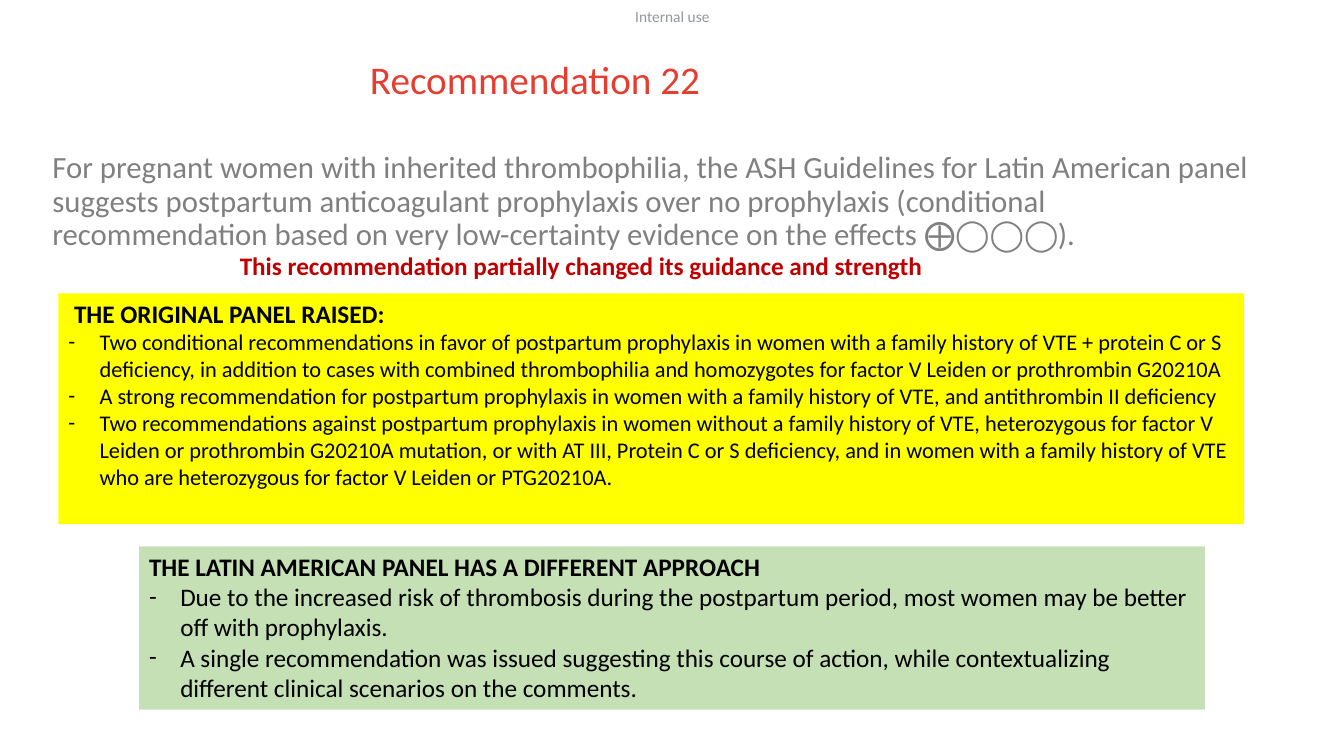
from dataclasses import dataclass

from lxml.etree import SubElement
from pptx import Presentation
from pptx.dml.color import RGBColor
from pptx.enum.shapes import MSO_SHAPE
from pptx.enum.text import MSO_ANCHOR, PP_ALIGN
from pptx.oxml.ns import qn
from pptx.util import Inches, Pt

COLORS = {
    "label": "93979B",
    "title": "E53E31",
    "body": "808080",
    "note": "C00000",
    "ink": "000000",
    "yellow": "FFFF00",
    "green": "C5E0B4",
}
FONT = "Calibri"
INDENT = Inches(0.31)


@dataclass
class Label:
    text: str
    box: tuple[float, float, float, float]
    size: int
    color: str
    bold: bool = False
    inset: bool = False
    wrap: bool = True
    spacing: float = 1.0


@dataclass
class Panel:
    head: str
    points: list[str]
    box: tuple[float, float, float, float]
    fill: str
    size: int


LABELS = [
    Label("Internal use", (6.3, 0.07, 0.78, 0.18), 11, "label", wrap=False),
    Label("Recommendation 22", (3.67, 0.6, 5.93, 0.46), 28, "title", spacing=0.9),
    Label(
        "For pregnant women with inherited thrombophilia, the ASH Guidelines for "
        "Latin American panel suggests postpartum anticoagulant prophylaxis over no "
        "prophylaxis (conditional recommendation based on very low-certainty evidence "
        "on the effects ⨁◯◯◯).",
        (0.52, 1.51, 12, 1.02), 22, "body", spacing=0.9,
    ),
    Label(
        "This recommendation partially changed its guidance and strength",
        (2.28, 2.43, 8.77, 0.4), 18, "note", bold=True, inset=True,
    ),
]

PANELS = [
    Panel(
        " THE ORIGINAL PANEL RAISED:",
        [
            "Two conditional recommendations in favor of postpartum prophylaxis in women "
            "with a family history of VTE + protein C or S deficiency, in addition to "
            "cases with combined thrombophilia and homozygotes for factor V Leiden or "
            "prothrombin G20210A",
            "A strong recommendation for postpartum prophylaxis in women with a family "
            "history of VTE, and antithrombin II deficiency",
            "Two recommendations against postpartum prophylaxis in women without a family "
            "history of VTE, heterozygous for factor V Leiden or prothrombin G20210A "
            "mutation, or with AT III, Protein C or S deficiency, and in women with a "
            "family history of VTE who are heterozygous for factor V Leiden or PTG20210A.",
        ],
        (0.58, 2.91, 11.76, 2.29), "yellow", 16,
    ),
    Panel(
        "THE LATIN AMERICAN PANEL HAS A DIFFERENT APPROACH",
        [
            "Due to the increased risk of thrombosis during the postpartum period, most "
            "women may be better off with prophylaxis.",
            "A single recommendation was issued suggesting this course of action, while "
            "contextualizing different clinical scenarios on the comments.",
        ],
        (1.38, 5.42, 10.57, 1.62), "green", 18,
    ),
]


def write(para, text: str, *, size: int, color: str = "ink", bold: bool = False,
          spacing: float = 1.0, bullet: bool = False) -> None:
    para.alignment = PP_ALIGN.LEFT
    para.line_spacing = spacing
    if bullet:
        props = para._p.get_or_add_pPr()
        props.set("marL", str(INDENT))
        props.set("indent", str(-INDENT))
        SubElement(props, qn("a:buFont"), typeface=FONT)
        SubElement(props, qn("a:buChar"), char="-")
    run = para.add_run()
    run.text = text
    font = run.font
    font.name, font.size, font.bold = FONT, Pt(size), bold
    font.color.rgb = RGBColor.from_string(COLORS[color])


def add_label(slide, label: Label) -> None:
    frame = slide.shapes.add_textbox(*map(Inches, label.box)).text_frame
    frame.word_wrap = label.wrap
    if not label.inset:
        frame.margin_left = frame.margin_right = 0
        frame.margin_top = frame.margin_bottom = 0
    write(frame.paragraphs[0], label.text, size=label.size, color=label.color,
          bold=label.bold, spacing=label.spacing)


def add_panel(slide, panel: Panel) -> None:
    shape = slide.shapes.add_shape(MSO_SHAPE.RECTANGLE, *map(Inches, panel.box))
    shape.shadow.inherit = False
    shape.fill.solid()
    shape.fill.fore_color.rgb = RGBColor.from_string(COLORS[panel.fill])
    shape.line.fill.background()
    frame = shape.text_frame
    frame.word_wrap = True
    frame.vertical_anchor = MSO_ANCHOR.TOP
    write(frame.paragraphs[0], panel.head, size=18, bold=True)
    for point in panel.points:
        write(frame.add_paragraph(), point, size=panel.size, bullet=True)


def main() -> None:
    deck = Presentation()
    deck.slide_width, deck.slide_height = Inches(13.33), Inches(7.5)
    slide = deck.slides.add_slide(deck.slide_layouts[6])

    # Header, guidance text and change note
    for label in LABELS:
        add_label(slide, label)

    # Panel comparison
    for panel in PANELS:
        add_panel(slide, panel)

    deck.save("out.pptx")


if __name__ == "__main__":
    main()
